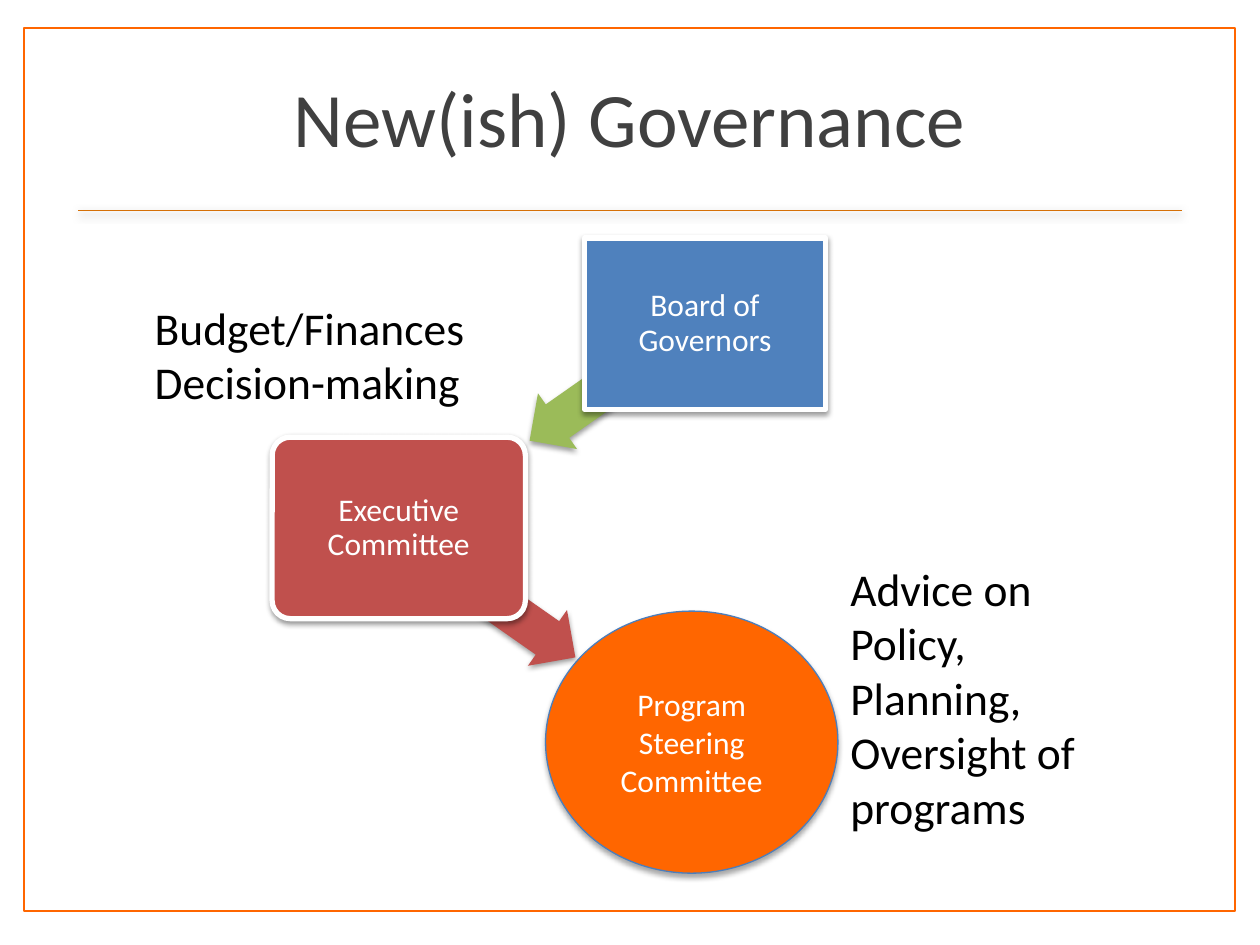
from lxml import etree
from pptx import Presentation
from pptx.dml.color import RGBColor
from pptx.enum import shapes, text
from pptx.oxml.ns import qn
from pptx.util import Inches, Pt


def rgb(value):
    return RGBColor.from_string(value)


def add_shadow(effects, alpha, blur, dist):
    shadow = etree.SubElement(effects, qn("a:outerShdw"), blurRad=str(Pt(blur)),
                              dist=str(Pt(dist)), dir="5400000", rotWithShape="0")
    color = etree.SubElement(shadow, qn("a:srgbClr"), val="000000")
    etree.SubElement(color, qn("a:alpha"), val=str(alpha * 1000))


prs = Presentation()
prs.slide_width, prs.slide_height = Inches(10), Inches(7.5)
s = prs.slides.add_slide(prs.slide_layouts[6])
kind = shapes.MSO_SHAPE
middle, center = text.MSO_ANCHOR.MIDDLE, text.PP_ALIGN.CENTER

frame = s.shapes.add_shape(kind.RECTANGLE, Inches(0.19), Inches(0.22), Inches(9.61), Inches(7.01))
frame.shadow.inherit = False
frame.fill.solid()
frame.fill.fore_color.rgb = rgb("FFFFFF")
frame.line.color.rgb = rgb("FF6600")
frame.line.width = Pt(1)

rule = s.shapes.add_connector(shapes.MSO_CONNECTOR.STRAIGHT,
                              Inches(0.62), Inches(1.67), Inches(9.38), Inches(1.67))
rule.line.color.rgb = rgb("D57007")
rule.line.width = Pt(1)
add_shadow(etree.SubElement(rule._element.spPr, qn("a:effectLst")), 35, 5, 1.8)

inset = dict.fromkeys(["margin_left", "margin_right", "margin_top", "margin_bottom"], Inches(0.06))
nodes = [
    (kind.OVAL, (4.33, 4.85, 2.32, 2.08), 0, [], "FF6600", ("4B7EBC", 0.75), (35, 3.1, 1.8),
     "Program Steering Committee", {}, 1),
    (kind.LEFT_ARROW, (3.02, 4.46, 1.7, 0.54), 215, [0.6, 0.5], "C0504D", None, (38, 3.1, 1.6),
     "", {}, 1),
    (kind.ROUNDED_RECTANGLE, (2.16, 3.47, 2.01, 1.44), 0, [0.1], "C0504D", ("FFFFFF", 3),
     (38, 3.1, 1.6), "Executive Committee", dict.fromkeys(inset, Inches(0.11)), 0.9),
    (kind.LEFT_ARROW, (4.05, 2.74, 1.7, 0.54), 325, [0.6, 0.5], "9BBB59", None, (38, 3.1, 1.6),
     "", {}, 1),
    (kind.RECTANGLE, (4.64, 1.89, 1.91, 1.36), 0, [], "4F81BD", ("FFFFFF", 3), (38, 3.1, 1.6),
     "Board of Governors", inset, 0.9),
]
for shape, box, rotation, adjust, fill, line, shadow, label, margins, spacing in nodes:
    sp = s.shapes.add_shape(shape, *map(Inches, box))
    sp.rotation = rotation
    for i, value in enumerate(adjust):
        sp.adjustments[i] = value
    sp.fill.solid()
    sp.fill.fore_color.rgb = rgb(fill)
    if line:
        sp.line.color.rgb = rgb(line[0])
        sp.line.width = Pt(line[1])
    else:
        sp.line.fill.background()
    sp.shadow.inherit = False
    add_shadow(sp._element.spPr.find(qn("a:effectLst")), *shadow)
    if label:
        tf = sp.text_frame
        for name, value in {"word_wrap": True, "vertical_anchor": middle, **margins}.items():
            setattr(tf, name, value)
        p = tf.paragraphs[0]
        p.alignment, p.line_spacing = center, spacing
        r = p.add_run()
        r.text = label
        for name, value in {"name": "Calibri", "size": Pt(18)}.items():
            setattr(r.font, name, value)
        r.font.color.rgb = rgb("FFFFFF")

left, top = text.PP_ALIGN.LEFT, text.MSO_ANCHOR.TOP
texts = [
    ((0.5, 0.3, 9, 1.25), ["New(ish) Governance"], 44, "404040", center, middle),
    ((1.13, 2.33, 2.74, 1.27), ["Budget/Finances", "Decision-making"], 26, "000000", left, top),
    ((6.65, 4.4, 2.3, 2.73), ["Advice on Policy, Planning, Oversight of programs"], 26, "000000",
     left, top),
]
for box, lines, size, color, align, anchor in texts:
    tf = s.shapes.add_textbox(*map(Inches, box)).text_frame
    tf.word_wrap, tf.vertical_anchor = True, anchor
    for i, line in enumerate(lines):
        p = tf.add_paragraph() if i else tf.paragraphs[0]
        p.alignment = align
        r = p.add_run()
        r.text = line
        for name, value in {"name": "Calibri", "size": Pt(size)}.items():
            setattr(r.font, name, value)
        r.font.color.rgb = rgb(color)

prs.save("out.pptx")
